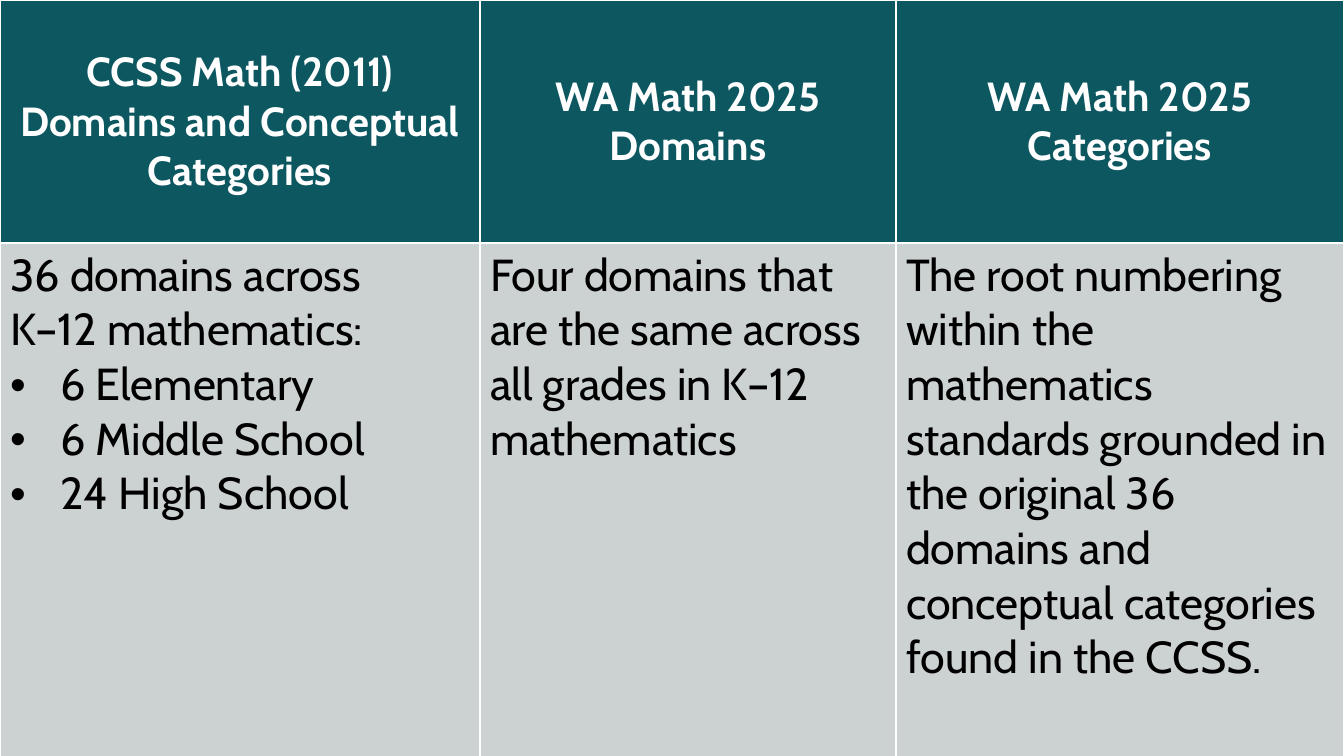
from dataclasses import dataclass

from lxml.etree import SubElement
from pptx import Presentation
from pptx.dml.color import RGBColor
from pptx.enum.text import MSO_ANCHOR, PP_ALIGN
from pptx.oxml.ns import qn
from pptx.util import Inches, Pt

PIXELS_PER_INCH = 100.8


def px(length):
    return Inches(length / PIXELS_PER_INCH)


@dataclass(frozen=True)
class Theme:
    font: str = "Cabin"
    header_fill: RGBColor = RGBColor(0x0D, 0x57, 0x61)
    header_text: RGBColor = RGBColor(0xFF, 0xFF, 0xFF)
    body_fill: RGBColor = RGBColor(0xCC, 0xD1, 0xD2)
    body_text: RGBColor = RGBColor(0x00, 0x00, 0x00)
    header_size: int = 29
    body_size: int = 32


class SlideBuilder:
    def __init__(self, slide, theme):
        self.slide = slide
        self.theme = theme
        self.header_font = {"name": theme.font, "size": Pt(theme.header_size), "bold": True}
        self.body_font = {"name": theme.font, "size": Pt(theme.body_size), "bold": False}

    def add_bullet(self, para, indent):
        properties = para._p.get_or_add_pPr()
        properties.set("marL", str(px(indent)))
        properties.set("indent", str(-px(indent)))
        SubElement(properties, qn("a:buFont")).set("typeface", "Arial")
        SubElement(properties, qn("a:buChar")).set("char", "•")

    def fill_cell(self, cell, lines, fill, color, font, anchor, alignment):
        cell.fill.solid()
        cell.fill.fore_color.rgb = fill
        cell.vertical_anchor = anchor
        frame = cell.text_frame
        for index, line in enumerate(lines):
            para = frame.add_paragraph() if index else frame.paragraphs[0]
            para.alignment = alignment
            if line.startswith("• "):
                self.add_bullet(para, 50)
            span = para.add_run()
            span.text = line.removeprefix("• ")
            for name, value in font.items():
                setattr(span.font, name, value)
            span.font.color.rgb = color

    def add_table(self, headers, bodies, widths, heights):
        theme = self.theme
        table = self.slide.shapes.add_table(
            len(heights), len(widths), 0, 0, px(sum(widths)), px(sum(heights))
        ).table
        for column, width in zip(table.columns, widths):
            column.width = px(width)
        for row, height in zip(table.rows, heights):
            row.height = px(height)
        for index, (header, body) in enumerate(zip(headers, bodies)):
            self.fill_cell(table.cell(0, index), header, theme.header_fill, theme.header_text,
                           self.header_font, MSO_ANCHOR.MIDDLE, PP_ALIGN.CENTER)
            self.fill_cell(table.cell(1, index), body, theme.body_fill, theme.body_text,
                           self.body_font, MSO_ANCHOR.TOP, PP_ALIGN.LEFT)


def main():
    deck = Presentation()
    deck.slide_width, deck.slide_height = px(1344), px(756)
    page = deck.slides.add_slide(deck.slide_layouts[6])
    builder = SlideBuilder(page, Theme())
    headers = [
        ["CCSS Math (2011)", "Domains and Conceptual Categories"],
        ["WA Math 2025 Domains"],
        ["WA Math 2025 Categories"],
    ]
    bodies = [
        ["36 domains across", "K–12 mathematics:",
         "• 6 Elementary", "• 6 Middle School", "• 24 High School"],
        ["Four domains that are the same across all grades in K–12 mathematics"],
        ["The root numbering within the mathematics standards grounded in the original 36 "
         "domains and conceptual categories found in the CCSS."],
    ]
    builder.add_table(headers, bodies, widths=[480, 416, 448], heights=[243, 514])
    deck.save("out.pptx")


if __name__ == "__main__":
    main()
